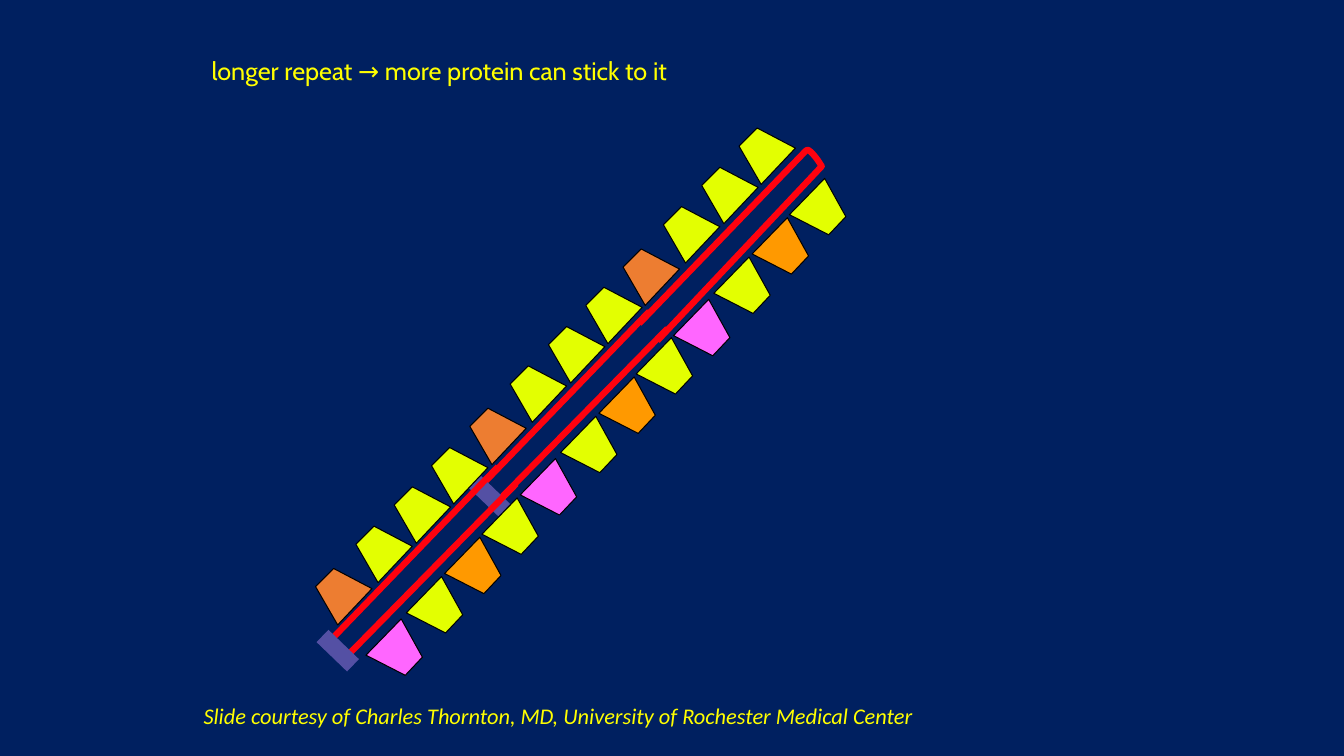
from pptx import Presentation
from pptx.dml.color import RGBColor
from pptx.enum.shapes import MSO_SHAPE
from pptx.enum.text import MSO_AUTO_SIZE
from pptx.util import Inches, Pt

COLORS = {
    "navy": "002060", "text": "FFFF00", "yellow": "E3FF01", "rust": "ED7D31",
    "orange": "FF9900", "pink": "FF66FF", "red": "FF020E", "purple": "5450A4",
    "black": "000000",
}
SECTIONS = [(0, 0), (-1.52, 1.58), (-3.05, 3.17)]
STEPS = [(0, 0), (-0.37, 0.39), (-0.75, 0.78), (-1.15, 1.2)]
UPPER = {
    "outline": [(7.89, 1.47), (7.51, 1.27), (7.33, 1.45), (7.55, 1.83)],
    "colors": ["yellow", "yellow", "yellow", "rust"],
}
LOWER = {
    "outline": [(8.18, 1.77), (8.39, 2.15), (8.22, 2.33), (7.83, 2.13)],
    "colors": ["yellow", "orange", "yellow", "pink"],
}
TOP_RAIL = {
    "start": (6.34, 3.21), "end": (6.52, 3.38),
    "curves": [[(7.96, 1.53), (7.98, 1.51), (8, 1.48), (8.02, 1.49)],
               [(8.02, 1.49), (8.08, 1.53), (8.15, 1.65), (8.15, 1.65)]],
}
RAIL = {
    "start": (6.44, 3.09), "end": (6.62, 3.26),
    "curves": [[(4.82, 4.77), (4.81, 4.79), (4.77, 4.82), (4.79, 4.84)],
               [(4.79, 4.84), (4.82, 4.9), (4.95, 4.96), (4.95, 4.96)]],
}
RAIL_STEP = (-1.5, 1.54)
CURVE_PARTS = 8


def rgb(name):
    """Return a named colour."""
    return RGBColor.from_string(COLORS[name])


def shift(points, dx, dy):
    """Move points by an offset."""
    return [(x + dx, y + dy) for x, y in points]


def curve(points):
    """Return points along a cubic curve."""
    def at(t):
        weights = [(1 - t) ** 3, 3 * t * (1 - t) ** 2, 3 * t * t * (1 - t), t ** 3]
        return tuple(sum(w * p[axis] for w, p in zip(weights, points)) for axis in (0, 1))
    return [at(i / CURVE_PARTS) for i in range(CURVE_PARTS + 1)]


def paint(sp, fill=None, line=None, width=0.75):
    """Set the fill and line of a shape."""
    sp.shadow.inherit = False
    for fmt, color in ((sp.fill, fill), (sp.line.fill, line)):
        if color:
            fmt.solid()
            fmt.fore_color.rgb = rgb(color)
        else:
            fmt.background()
    if line:
        sp.line.width = Pt(width)


def add_outline(s, points, close=True, **look):
    """Draw a freeform through points."""
    points = [(Inches(x), Inches(y)) for x, y in points]
    builder = s.shapes.build_freeform(*points[0])
    builder.add_line_segments(points[1:], close=close)
    paint(builder.convert_to_shape(), **look)


def add_rail(s, rail, dx=0, dy=0):
    """Draw a red rail with a rounded end."""
    points = [rail["start"]]
    for controls in rail["curves"]:
        points += curve(controls)
    points.append(rail["end"])
    add_outline(s, shift(points, dx, dy), close=False, line="red", width=4.5)


def add_bar(s, dx, dy):
    """Draw the purple bar that closes a rail."""
    sp = s.shapes.add_shape(MSO_SHAPE.RECTANGLE, Inches(4.64 + dx), Inches(4.83 + dy),
                            Inches(0.42), Inches(0.17))
    sp.rotation = 43.9
    paint(sp, fill="purple")


def add_proteins(s, side, dx, dy):
    """Draw four proteins on one side of a section."""
    for (step_x, step_y), color in zip(STEPS, side["colors"]):
        add_outline(s, shift(side["outline"], dx + step_x, dy + step_y),
                    fill=color, line="black")


def add_label(s, text, box, wrap, **font):
    """Add a line of yellow text."""
    tf = s.shapes.add_textbox(*map(Inches, box)).text_frame
    tf.word_wrap = wrap
    tf.auto_size = MSO_AUTO_SIZE.SHAPE_TO_FIT_TEXT
    r = tf.paragraphs[0].add_run()
    r.text = text
    for key, value in font.items():
        setattr(r.font, key, value)
    r.font.color.rgb = rgb("text")


def main():
    """Build the slide and save it."""
    prs = Presentation()
    prs.slide_width, prs.slide_height = Inches(13.33), Inches(7.5)
    s = prs.slides.add_slide(prs.slide_layouts[6])
    s.background.fill.solid()
    s.background.fill.fore_color.rgb = rgb("navy")
    for i, (dx, dy) in enumerate(SECTIONS):
        if i == 0:
            add_rail(s, TOP_RAIL)
        else:
            offset = [(i - 1) * step for step in RAIL_STEP]
            add_rail(s, RAIL, *offset)
            add_bar(s, *offset)
        for side in (UPPER, LOWER):
            add_proteins(s, side, dx, dy)
    add_label(s, "longer repeat → more protein can stick to it",
              (2, 0.5, 5.1, 0.4), False, name="Cabin", size=Pt(18))
    add_label(s, "Slide courtesy of Charles Thornton, MD, University of Rochester Medical Center",
              (1.92, 6.92, 9.25, 0.37), True, name="Calibri", size=Pt(16), italic=True)
    prs.save("out.pptx")


if __name__ == "__main__":
    main()
